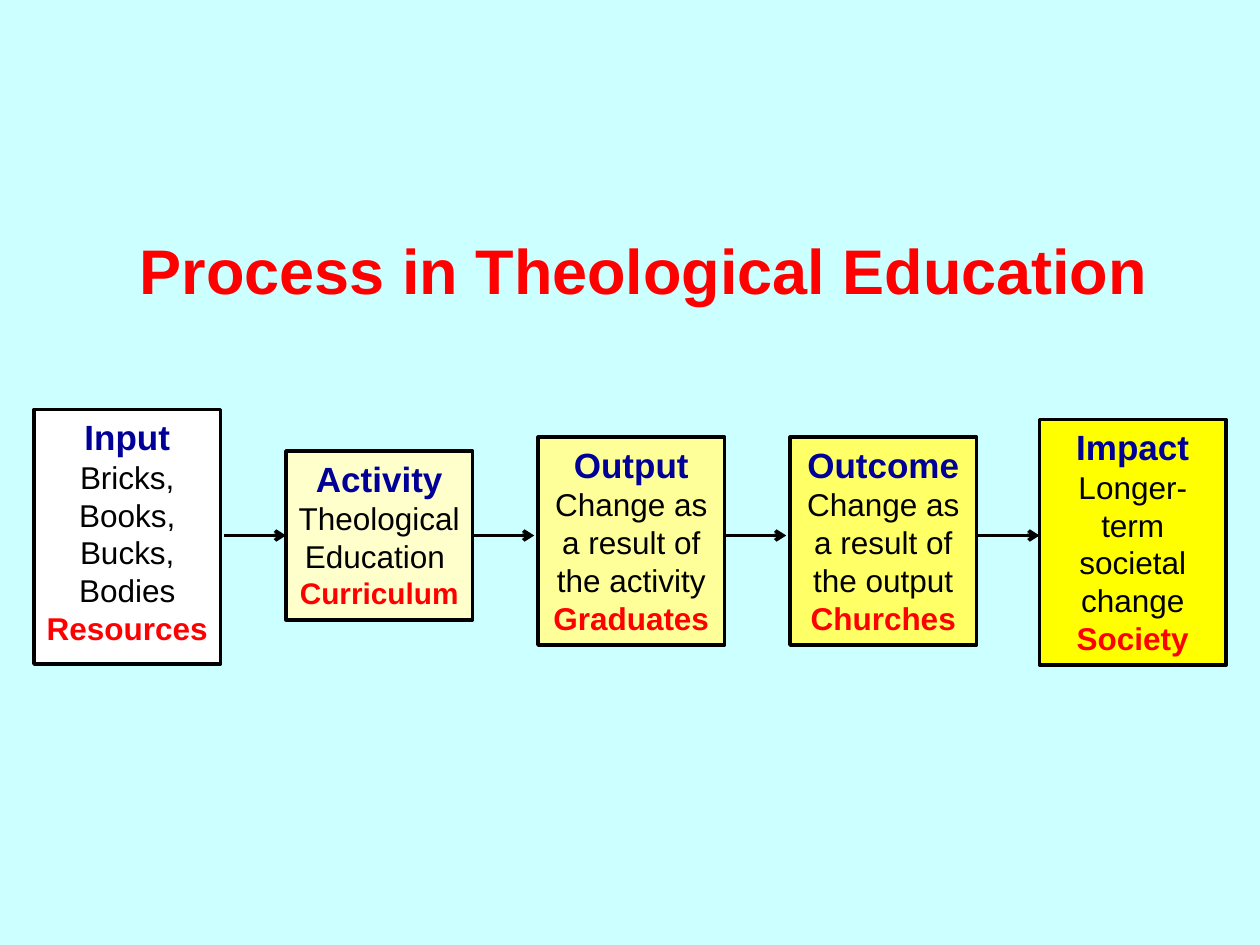
from pptx import Presentation
from pptx.dml.color import RGBColor
from pptx.enum.shapes import MSO_CONNECTOR, MSO_SHAPE
from pptx.enum.text import MSO_ANCHOR, MSO_AUTO_SIZE, PP_ALIGN
from pptx.oxml.ns import qn
from pptx.util import Emu, Pt
from lxml.etree import SubElement

PX = 9144  # 100 px to the inch
BOX_W, ARROW_W, ARROW_Y = 148, 49, 425
LEFT_SIDE, RIGHT_SIDE = 1, 3

# left, top, height, fill, heading, description, theological example, its size
STAGES = [
    (27, 325, 202, "FFFFFF", "Input", "Bricks, Books, Bucks, Bodies", "Resources", 18),
    (227, 358, 134, "FFFFCC", "Activity", "Theological Education ", "Curriculum", 17),
    (427, 347, 165, "FFFF99", "Output", "Change as a result of the activity", "Graduates", 18),
    (627, 347, 165, "FFFF66", "Outcome", "Change as a result of the output", "Churches", 18),
    (825, 333, 195, "FFFF00", "Impact", "Longer-term societal change", "Society", 18),
]
# left, stage that the start touches, stage that the end touches
ARROWS = [(178, None, 1), (375, 1, None), (575, None, None), (776, None, None)]


def px(*lengths):
    return [Emu(length * PX) for length in lengths]


def color(hex_value):
    return RGBColor.from_string(hex_value)


def write_lines(frame, lines):
    """Fill a frame with centred paragraphs of (text, size, colour, bold)."""
    layout = {"word_wrap": True, "auto_size": MSO_AUTO_SIZE.SHAPE_TO_FIT_TEXT,
              "vertical_anchor": MSO_ANCHOR.TOP}
    for key, value in layout.items():
        setattr(frame, key, value)
    for index, (text, size, ink, bold) in enumerate(lines):
        paragraph = frame.add_paragraph() if index else frame.paragraphs[0]
        paragraph.alignment = PP_ALIGN.CENTER
        run = paragraph.add_run()
        run.text = text
        for key, value in {"name": "Arial", "size": Pt(size), "bold": bold}.items():
            setattr(run.font, key, value)
        run.font.color.rgb = color(ink)


def style_line(line):
    line.color.rgb = color("000000")
    line.width = Pt(2)


def add_title(slide, left, top, width, height):
    title = slide.shapes.add_textbox(*px(left, top, width, height))
    write_lines(title.text_frame, [("Process in Theological Education", 36, "FF0000", True)])


def add_stage(slide, left, top, height, fill, heading, description, example, example_size):
    stage = slide.shapes.add_shape(MSO_SHAPE.RECTANGLE, *px(left, top, BOX_W, height))
    stage.shadow.inherit = False
    stage.fill.solid()
    stage.fill.fore_color.rgb = color(fill)
    style_line(stage.line)
    write_lines(stage.text_frame, [
        (heading, 20, "000099", True),
        (description, 18, "000000", False),
        (example, example_size, "FF0000", True),
    ])
    return stage


def add_arrow(slide, left, source, target):
    arrow = slide.shapes.add_connector(
        MSO_CONNECTOR.STRAIGHT, *px(left, ARROW_Y, left + ARROW_W, ARROW_Y))
    if source is not None:
        arrow.begin_connect(source, RIGHT_SIDE)
    if target is not None:
        arrow.end_connect(target, LEFT_SIDE)
    style_line(arrow.line)
    SubElement(arrow.line._get_or_add_ln(), qn("a:tailEnd"), type="arrow")
    SubElement(arrow._element.spPr, qn("a:effectLst"))


def add_process(slide):
    stages = [add_stage(slide, *stage) for stage in STAGES]
    for left, source, target in ARROWS:
        add_arrow(slide, left, *(None if end is None else stages[end]
                                 for end in (source, target)))


def main():
    deck = Presentation()
    deck.slide_width, deck.slide_height = px(1000, 750)
    slide = deck.slides.add_slide(deck.slide_layouts[6])
    slide.background.fill.solid()
    slide.background.fill.fore_color.rgb = color("CCFFFF")
    add_title(slide, 50, 179, 922, 71)
    add_process(slide)
    deck.save("out.pptx")


if __name__ == "__main__":
    main()
